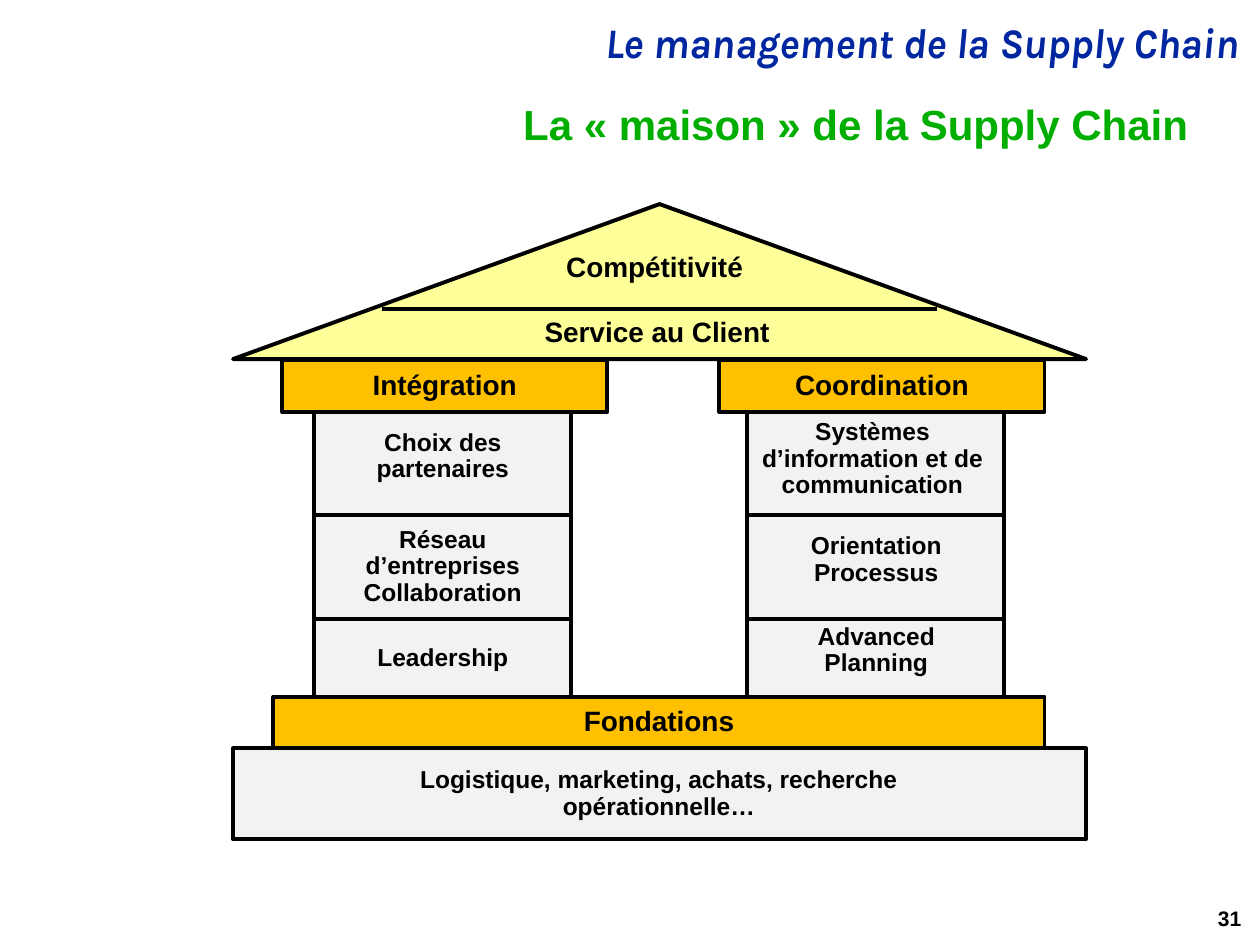
"""Build the slide showing the house of the supply chain."""
import pptx
import pptx.dml.color
import pptx.enum.shapes
import pptx.enum.text
import pptx.oxml
import pptx.oxml.ns
import pptx.util

SHAPES = pptx.enum.shapes.MSO_SHAPE
ALIGN = pptx.enum.text.PP_ALIGN
INCH = pptx.util.Inches

HEADER = "Le management de la Supply Chain"
TITLE = "La «\u00a0maison\u00a0» de la Supply Chain"
ROOF_LABELS = [("Compétitivité", 4.39, 1.96, 1.61), ("Service au Client", 4.21, 2.48, 2.01)]
PILLARS = [
    {"cap": "Intégration", "cap_left": 2.24, "left": 2.49, "blocks": [
        ("Choix des partenaires", 2.6, 3.37, 1.83, 0.51),
        ("Réseau d’entreprises\nCollaboration", 2.6, 4.14, 1.83, 0.72),
        ("Leadership", 2.6, 4.97, 1.83, 0.52)]},
    {"cap": "Coordination", "cap_left": 5.71, "left": 5.93, "blocks": [
        ("Systèmes d’information et de communication", 5.94, 3.39, 1.97, 0.51),
        ("Orientation Processus", 6.04, 4.19, 1.83, 0.51),
        ("Advanced Planning", 6.04, 4.91, 1.83, 0.51)]},
]
FOUNDATION = "Fondations"
BASE = "Logistique, marketing, achats, recherche opérationnelle…"
PAGE_NUMBER = "31"

YELLOW, ORANGE, GREY, BLACK = "FFFF99", "FFC000", "F2F2F2", "000000"
HOUSE_LEFT, HOUSE_WIDTH = 1.85, 6.77
ROOF_TOP, ROOF_HEIGHT = 1.62, 1.23
CAP_TOP, CAP_WIDTH, BAND_HEIGHT = 2.86, 2.58, 0.41
PILLAR_TOP, PILLAR_WIDTH, PILLAR_HEIGHT = CAP_TOP + BAND_HEIGHT, 2.04, 2.26
FOUNDATION_TOP = PILLAR_TOP + PILLAR_HEIGHT
BASE_TOP = FOUNDATION_TOP + BAND_HEIGHT
FLOOR_HEIGHT = 0.82


def color(value):
    """Turn a hex string into a colour."""
    return pptx.dml.color.RGBColor.from_string(value)


def write(shape, text, size=14, font="Arial", ink=BLACK, italic=False,
          align=ALIGN.CENTER, wrap=True, anchor=pptx.enum.text.MSO_ANCHOR.MIDDLE):
    """Write one formatted paragraph into a shape."""
    frame = shape.text_frame
    frame.word_wrap = wrap
    frame.vertical_anchor = anchor
    para = frame.paragraphs[0]
    para.text = text
    para.alignment = align
    para.line_spacing = 0.9
    for span in para.runs:
        span.font.size = pptx.util.Pt(size)
        span.font.name = font
        span.font.bold = True
        span.font.italic = italic
        span.font.color.rgb = color(ink)


def add_text(page, text, left, top, width, height, **style):
    """Add a text box."""
    box = page.shapes.add_textbox(INCH(left), INCH(top), INCH(width), INCH(height))
    write(box, text, **style)


def add_part(page, fill, left, top, width, height, kind=SHAPES.RECTANGLE):
    """Add an outlined part of the house."""
    part = page.shapes.add_shape(kind, INCH(left), INCH(top), INCH(width), INCH(height))
    part.shadow.inherit = False
    part.fill.solid()
    part.fill.fore_color.rgb = color(fill)
    part.line.color.rgb = color(BLACK)
    part.line.width = pptx.util.Pt(2.25)
    return part


def add_divider(page, left, right, top):
    """Add a horizontal line."""
    line = page.shapes.add_connector(pptx.enum.shapes.MSO_CONNECTOR.STRAIGHT,
                                     INCH(left), INCH(top), INCH(right), INCH(top))
    line.line.color.rgb = color(BLACK)
    line.line.width = pptx.util.Pt(2.25)
    properties = line._element.find(pptx.oxml.ns.qn("p:spPr"))
    properties.append(pptx.oxml.parse_xml(f'<a:effectLst {pptx.oxml.ns.nsdecls("a")}/>'))


def add_pillar(page, pillar):
    """Add a cap, its pillar and the pillar's three blocks."""
    cap = add_part(page, ORANGE, pillar["cap_left"], CAP_TOP, CAP_WIDTH, BAND_HEIGHT)
    write(cap, pillar["cap"], size=16, wrap=False)
    left = pillar["left"]
    add_part(page, GREY, left, PILLAR_TOP, PILLAR_WIDTH, PILLAR_HEIGHT)
    for floor in (1, 2):
        add_divider(page, left, left + PILLAR_WIDTH, PILLAR_TOP + floor * FLOOR_HEIGHT)
    for block in pillar["blocks"]:
        add_text(page, *block)


def main():
    """Build and save the deck."""
    deck = pptx.Presentation()
    deck.slide_width, deck.slide_height = INCH(10), INCH(7.5)
    page = deck.slides.add_slide(deck.slide_layouts[6])

    add_text(page, HEADER, 1.85, 0.13, 8.08, 0.46, size=24, font="Karla", ink="00279F",
             italic=True, align=ALIGN.RIGHT, anchor=pptx.enum.text.MSO_ANCHOR.TOP)
    add_text(page, TITLE, 1.61, 0.76, 7.92, 0.5, size=24, ink="00AE00", align=ALIGN.RIGHT)

    add_part(page, YELLOW, HOUSE_LEFT, ROOF_TOP, HOUSE_WIDTH, ROOF_HEIGHT,
             kind=SHAPES.ISOSCELES_TRIANGLE)
    add_divider(page, 3.03, 7.44, 2.45)
    for text, left, top, width in ROOF_LABELS:
        add_text(page, text, left, top, width, 0.34, size=16, wrap=False)

    for pillar in PILLARS:
        add_pillar(page, pillar)

    foundation = add_part(page, ORANGE, 2.17, FOUNDATION_TOP, 6.12, BAND_HEIGHT)
    write(foundation, FOUNDATION, size=16, wrap=False)
    add_part(page, GREY, HOUSE_LEFT, BASE_TOP, HOUSE_WIDTH, 0.72)
    add_text(page, BASE, 2.49, BASE_TOP + 0.1, 5.48, 0.52)
    add_text(page, PAGE_NUMBER, 7.7, 7.1, 2.25, 0.4, size=12, align=ALIGN.RIGHT)
    deck.save("out.pptx")


if __name__ == "__main__":
    main()
